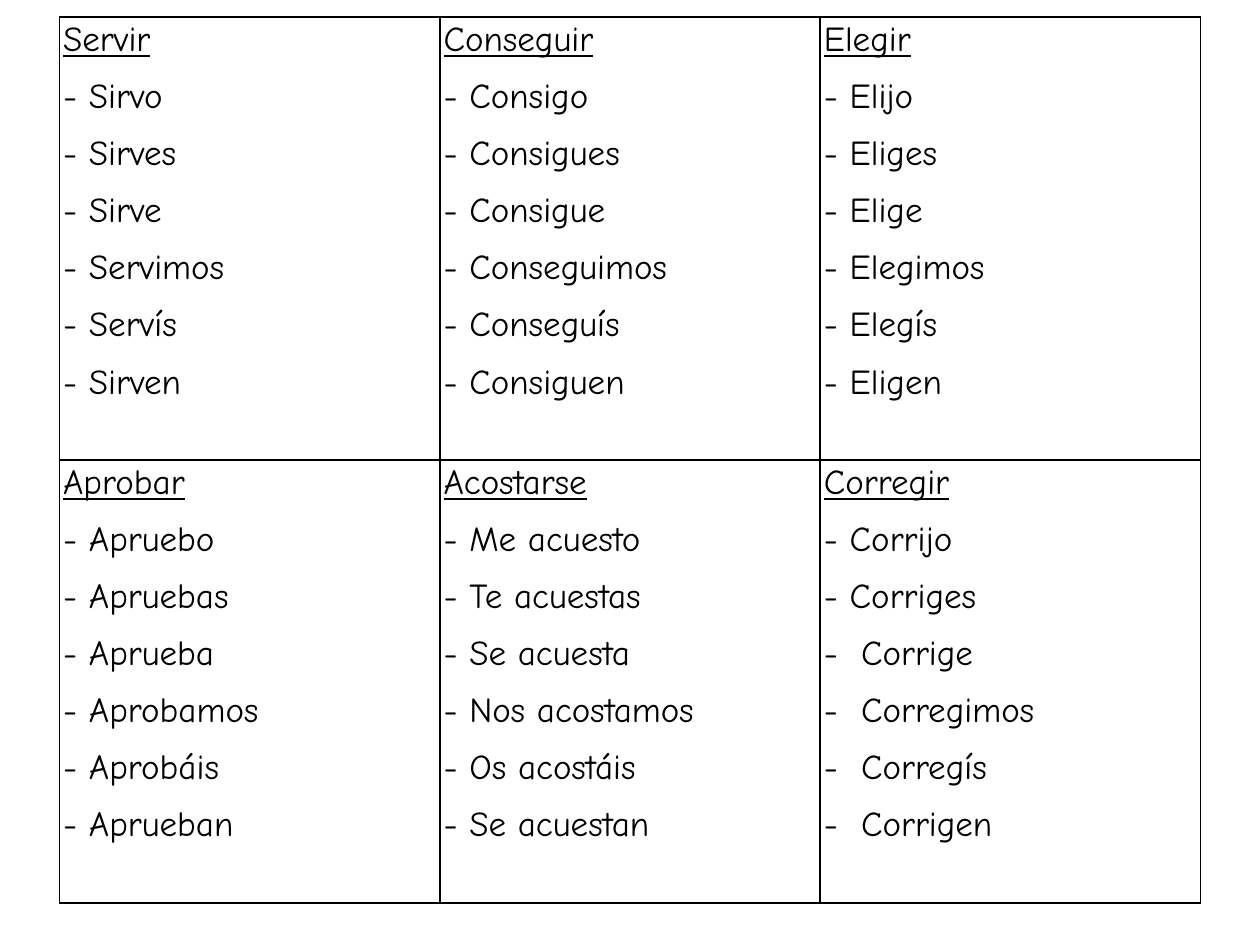
from lxml import etree
from pptx import Presentation
from pptx.dml.color import RGBColor
from pptx.oxml.ns import qn
from pptx.util import Pt

COLORS = {"ink": "000000", "paper": "FFFFFF"}
FONT = "Comic Neue"
BLANK_LAYOUT = 6
COLUMNS = 3
WIDE_GAP = 21.2
VERBS = [
    ("Servir", ["- Sirvo", "- Sirves", "- Sirve", "- Servimos", "- Servís", "- Sirven"]),
    ("Conseguir", ["- Consigo", "- Consigues", "- Consigue", "- Conseguimos",
                   "- Conseguís", "- Consiguen"]),
    ("Elegir", ["- Elijo", "- Eliges", "- Elige", "- Elegimos", "- Elegís", "- Eligen"]),
    ("Aprobar", ["- Apruebo", "- Apruebas", "- Aprueba", "- Aprobamos",
                 "- Aprobáis", "- Aprueban"]),
    ("Acostarse", ["- Me acuesto", "- Te acuestas", "- Se acuesta", "- Nos acostamos",
                   "- Os acostáis", "- Se acuestan"]),
    ("Corregir", ["- Corrijo", "- Corriges", "-\tCorrige", "-\tCorregimos",
                  "-\tCorregís", "-\tCorrigen"]),
]


def add_borders(cell):
    """Draw a one-point line on each side of a cell."""
    properties = cell._tc.get_or_add_tcPr()
    for side in ("lnL", "lnR", "lnT", "lnB"):
        line = etree.SubElement(properties, qn(f"a:{side}"), w=str(Pt(1)))
        fill = etree.SubElement(line, qn("a:solidFill"))
        etree.SubElement(fill, qn("a:srgbClr"), val=COLORS["ink"])


def add_tab_stop(paragraph, position):
    """Add a left tab stop to a paragraph."""
    properties = paragraph._p.get_or_add_pPr()
    stops = etree.SubElement(properties, qn("a:tabLst"))
    etree.SubElement(stops, qn("a:tab"), pos=str(Pt(position)), algn="l")


def fill_verb_cell(cell, verb, forms):
    """Write an underlined verb and its conjugated forms into a cell."""
    add_borders(cell)
    cell.fill.solid()
    cell.fill.fore_color.rgb = RGBColor.from_string(COLORS["paper"])
    cell.margin_left = cell.margin_right = Pt(2.16)
    cell.margin_top = cell.margin_bottom = Pt(0)
    cell.text_frame.text = "\n".join([verb, *forms])
    for index, paragraph in enumerate(cell.text_frame.paragraphs):
        paragraph.line_spacing = 1.07
        paragraph.space_after = Pt(8)
        if "\t" in paragraph.text:
            add_tab_stop(paragraph, WIDE_GAP)
        for run in paragraph.runs:
            run.font.name = FONT
            run.font.size = Pt(20)
            run.font.underline = index == 0
            run.font.color.rgb = RGBColor.from_string(COLORS["ink"])


def add_verb_table(slide, left, top, width, height):
    """Lay the verbs out in an even grid inside the given box."""
    rows = len(VERBS) // COLUMNS
    table = slide.shapes.add_table(
        rows, COLUMNS, Pt(left), Pt(top), Pt(width), Pt(height)).table
    table.first_row = False
    table.horz_banding = False
    for index, (verb, forms) in enumerate(VERBS):
        fill_verb_cell(table.cell(*divmod(index, COLUMNS)), verb, forms)


def main():
    """Build the slide and save it."""
    presentation = Presentation()
    presentation.slide_width = Pt(720)
    presentation.slide_height = Pt(540)
    slide = presentation.slides.add_slide(presentation.slide_layouts[BLANK_LAYOUT])
    add_verb_table(slide, 33.9, 9.8, 652.2, 506.2)
    presentation.save("out.pptx")


if __name__ == "__main__":
    main()
